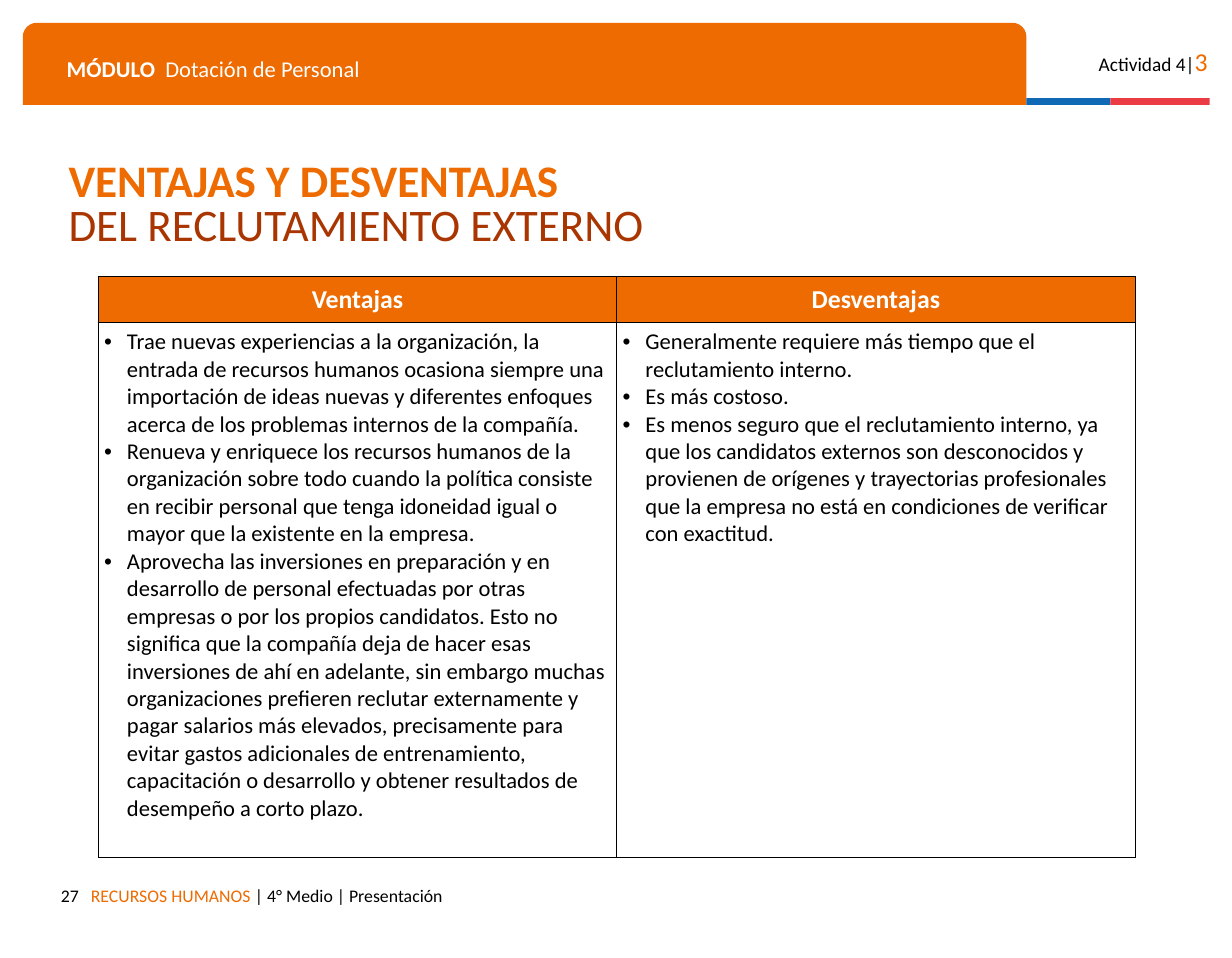
import pptx
import pptx.util
import pptx.dml.color
import pptx.enum.shapes
import pptx.enum.text
import pptx.oxml
from pptx.oxml.ns import qn

Cm = pptx.util.Cm
Pt = pptx.util.Pt
ALIGN = pptx.enum.text.PP_ALIGN
ANCHOR = pptx.enum.text.MSO_ANCHOR
SHAPE = pptx.enum.shapes.MSO_SHAPE

COLORS = {
    "orange": "ED6B00",
    "brown": "A93501",
    "blue": "0F69B4",
    "red": "EB3C46",
    "white": "FFFFFF",
    "black": "000000",
}
FONT = "Calibri"
NAMESPACE = 'xmlns:a="http://schemas.openxmlformats.org/drawingml/2006/main"'

ADVANTAGES = [
    "Trae nuevas experiencias a la organización, la entrada de recursos humanos ocasiona siempre "
    "una importación de ideas nuevas y diferentes enfoques acerca de los problemas internos de la compañía.",
    "Renueva y enriquece los recursos humanos de la organización sobre todo cuando la política consiste "
    "en recibir personal que tenga idoneidad igual o mayor que la existente en la empresa.",
    "Aprovecha las inversiones en preparación y en desarrollo de personal efectuadas por otras empresas "
    "o por los propios candidatos. Esto no significa que la compañía deja de hacer esas inversiones de ahí "
    "en adelante, sin embargo muchas organizaciones prefieren reclutar externamente y pagar salarios más "
    "elevados, precisamente para evitar gastos adicionales de entrenamiento, capacitación o desarrollo "
    "y obtener resultados de desempeño a corto plazo.",
]
DISADVANTAGES = [
    "Generalmente requiere más tiempo que el reclutamiento interno.",
    "Es más costoso.",
    "Es menos seguro que el reclutamiento interno, ya que los candidatos externos son desconocidos y "
    "provienen de orígenes y trayectorias profesionales que la empresa no está en condiciones de "
    "verificar con exactitud.",
]


def rgb(color):
    return pptx.dml.color.RGBColor.from_string(COLORS[color])


def add_span(para, text, size, color, bold=False):
    span = para.add_run()
    span.text = text
    span.font.name = FONT
    span.font.size = Pt(size)
    span.font.bold = bold
    span.font.color.rgb = rgb(color)


def set_frame(frame, anchor=ANCHOR.TOP):
    frame.word_wrap = True
    frame.auto_size = pptx.enum.text.MSO_AUTO_SIZE.NONE
    frame.vertical_anchor = anchor
    frame.margin_left = frame.margin_right = Cm(0.25)
    frame.margin_top = frame.margin_bottom = Cm(0.25)


def add_label(page, left, top, width, height, align=ALIGN.LEFT):
    box = page.shapes.add_textbox(Cm(left), Cm(top), Cm(width), Cm(height))
    set_frame(box.text_frame)
    para = box.text_frame.paragraphs[0]
    para.alignment = align
    return para


def add_block(page, kind, color, left, top, width, height):
    block = page.shapes.add_shape(kind, Cm(left), Cm(top), Cm(width), Cm(height))
    block.shadow.inherit = False
    block.fill.solid()
    block.fill.fore_color.rgb = rgb(color)
    block.line.fill.background()
    return block


def add_header(page, left, top, width, height):
    band_width, blue_width, stripe = 21.97, 1.84, 0.15
    band = add_block(page, SHAPE.ROUND_2_SAME_RECTANGLE, "orange", left, top, band_width, height)
    band.adjustments[0] = 0.17
    stripe_left, stripe_top = left + band_width, top + height - stripe
    add_block(page, SHAPE.RECTANGLE, "blue", stripe_left, stripe_top, blue_width, stripe)
    add_block(page, SHAPE.RECTANGLE, "red", stripe_left + blue_width, stripe_top,
              width - band_width - blue_width, stripe)

    module = add_label(page, left + 0.71, top + 0.46, 20.68, 1.04)
    module._p.get_or_add_pPr().append(pptx.oxml.parse_xml(
        f'<a:tabLst {NAMESPACE}><a:tab pos="{Cm(2.16)}" algn="l"/></a:tabLst>'))
    add_span(module, "MÓDULO", 14, "white", True)
    add_span(module, "\tDotación de Personal", 14, "white")

    activity = add_label(page, left + width - 3.04, top + 0.25, 3.25, 1.09, ALIGN.RIGHT)
    add_span(activity, "Actividad 4|", 12, "black")
    add_span(activity, "3", 16, "orange")


def add_title(page, left, top, width, height):
    title = page.shapes.title
    title.left, title.top, title.width, title.height = Cm(left), Cm(top), Cm(width), Cm(height)
    frame = title.text_frame
    set_frame(frame, ANCHOR.MIDDLE)
    lines = [("VENTAJAS Y DESVENTAJAS", "orange", True), ("DEL RECLUTAMIENTO EXTERNO", "brown", False)]
    for index, (text, color, bold) in enumerate(lines):
        para = frame.add_paragraph() if index else frame.paragraphs[0]
        para.alignment = ALIGN.LEFT
        para.line_spacing = 0.8
        add_span(para, text, 28, color, bold)


def set_borders(cell):
    properties = cell._tc.get_or_add_tcPr()
    for index, side in enumerate(("lnL", "lnR", "lnT", "lnB")):
        properties.insert(index, pptx.oxml.parse_xml(
            f'<a:{side} {NAMESPACE} w="{Pt(0.75)}"><a:solidFill>'
            f'<a:srgbClr val="{COLORS["black"]}"/></a:solidFill></a:{side}>'))


def add_bullet(para):
    properties = para._p.get_or_add_pPr()
    properties.set("marL", str(Cm(0.5)))
    properties.set("indent", str(Cm(-0.5)))
    for markup in (
        f'<a:buClr {NAMESPACE}><a:srgbClr val="{COLORS["black"]}"/></a:buClr>',
        f'<a:buFont {NAMESPACE} typeface="Arial"/>',
        f'<a:buChar {NAMESPACE} char="•"/>',
    ):
        properties.append(pptx.oxml.parse_xml(markup))


def add_comparison(page, left, top, width, height):
    header_height = 1
    table = page.shapes.add_table(2, 2, Cm(left), Cm(top), Cm(width), Cm(height)).table
    table.first_row = table.horz_banding = False
    table.rows[0].height = Cm(header_height)
    table.rows[1].height = Cm(height - header_height)
    columns = [("Ventajas", ADVANTAGES), ("Desventajas", DISADVANTAGES)]
    for column, (heading, items) in enumerate(columns):
        table.columns[column].width = Cm(width / 2)
        head, body = table.cell(0, column), table.cell(1, column)
        for cell in (head, body):
            cell.margin_left = cell.margin_right = Cm(0.13)
            cell.margin_top = cell.margin_bottom = Cm(0.13)
            set_borders(cell)
        head.fill.solid()
        head.fill.fore_color.rgb = rgb("orange")
        head.vertical_anchor = ANCHOR.MIDDLE
        para = head.text_frame.paragraphs[0]
        para.alignment = ALIGN.CENTER
        add_span(para, heading, 16, "white", True)
        body.fill.background()
        for index, item in enumerate(items):
            para = body.text_frame.add_paragraph() if index else body.text_frame.paragraphs[0]
            add_bullet(para)
            add_span(para, item, 14, "black")


def add_footer(page, left, top, width, height):
    number_width = 0.94
    number = add_label(page, left, top, number_width, height, ALIGN.RIGHT)
    add_span(number, "27", 11, "black")
    course_left = left + 0.7
    course = add_label(page, course_left, top, left + width - course_left, height)
    add_span(course, "RECURSOS HUMANOS ", 11, "orange")
    add_span(course, "| 4° Medio | Presentación", 11, "black")


def main():
    deck = pptx.Presentation()
    deck.slide_width, deck.slide_height = Cm(26.97), Cm(20.98)
    page = deck.slides.add_slide(deck.slide_layouts[5])
    add_header(page, 0.5, 0.5, 25.98, 1.8)
    add_title(page, 1.25, 3.28, 16.38, 2.49)
    add_comparison(page, 2.15, 6.06, 22.7, 12.72)
    add_footer(page, 1.04, 19.13, 18.85, 0.89)
    deck.save("out.pptx")


if __name__ == "__main__":
    main()
